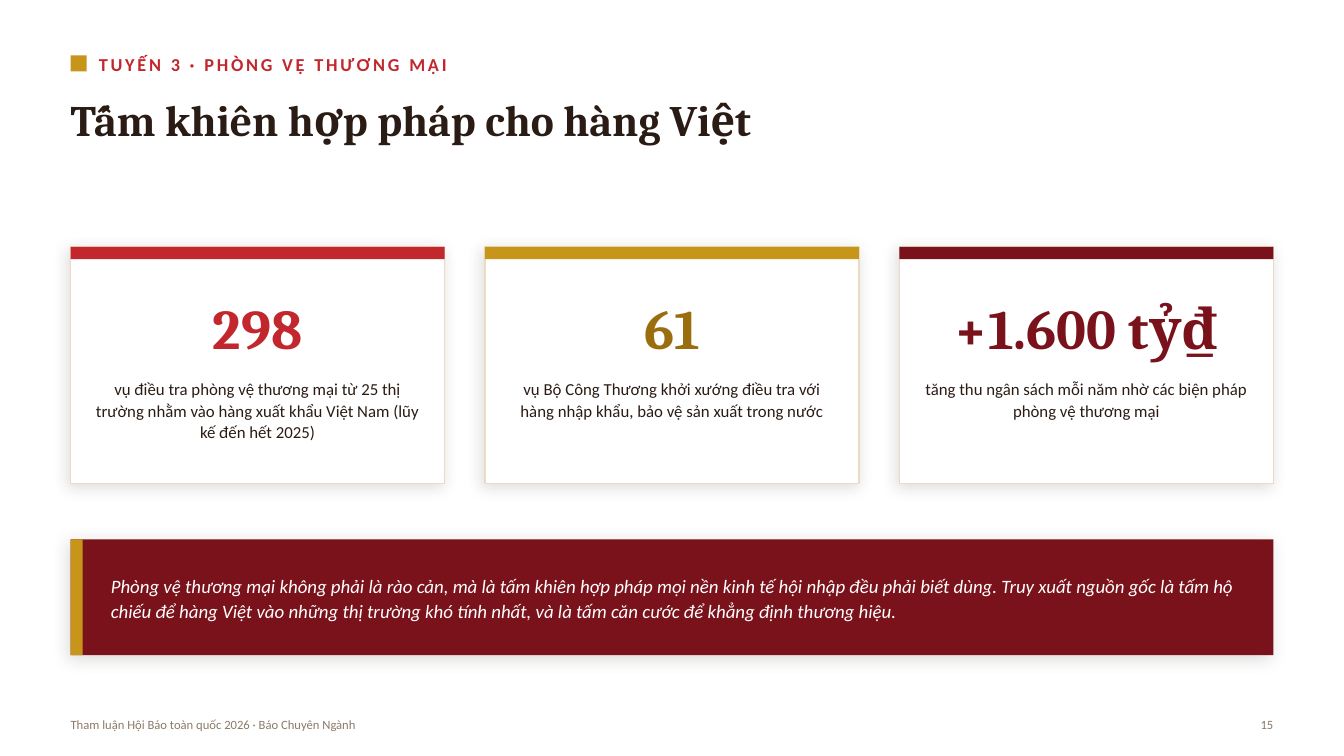
from lxml import etree
from pptx import Presentation
from pptx.dml.color import RGBColor
from pptx.enum.shapes import MSO_SHAPE
from pptx.enum.text import MSO_ANCHOR, MSO_AUTO_SIZE, PP_ALIGN
from pptx.oxml.ns import qn
from pptx.util import Inches, Pt

RECTANGLE = MSO_SHAPE.RECTANGLE
TOP, MIDDLE = MSO_ANCHOR.TOP, MSO_ANCHOR.MIDDLE
LEFT, CENTER, RIGHT = PP_ALIGN.LEFT, PP_ALIGN.CENTER, PP_ALIGN.RIGHT
NO_AUTOFIT = MSO_AUTO_SIZE.NONE

RED, GOLD, DARK_GOLD, MAROON = "C1272D", "C8951B", "9A6E0F", "7A121B"
INK, MUTED, WHITE, CARD_EDGE = "2A1C14", "8A7A68", "FFFFFF", "EADBC4"
HEADING_FONT, BODY_FONT = "Cambria", "Calibri"

MARGIN, CONTENT_WIDTH = 0.7, 11.93
CARD_TOP, CARD_WIDTH, CARD_HEIGHT, CARD_GAP = 2.45, 3.71, 2.35, 0.4
CARD_PADDING, ACCENT = 0.25, 0.12
QUOTE_TOP, QUOTE_HEIGHT = 5.35, 1.15
FOOTER_TOP, FOOTER_HEIGHT = 7.04, 0.3

CARDS = [
    ("298", "vụ điều tra phòng vệ thương mại từ 25 thị trường nhằm vào hàng "
     "xuất khẩu Việt Nam (lũy kế đến hết 2025)", RED, RED),
    ("61", "vụ Bộ Công Thương khởi xướng điều tra với hàng nhập khẩu, "
     "bảo vệ sản xuất trong nước", GOLD, DARK_GOLD),
    ("+1.600 tỷ₫", "tăng thu ngân sách mỗi năm nhờ các biện pháp "
     "phòng vệ thương mại", MAROON, MAROON),
]
QUOTE = (
    "Phòng vệ thương mại không phải là rào cản, mà là tấm khiên hợp pháp mọi "
    "nền kinh tế hội nhập đều phải biết dùng. Truy xuất nguồn gốc là tấm hộ "
    "chiếu để hàng Việt vào những thị trường khó tính nhất, và là tấm căn cước "
    "để khẳng định thương hiệu."
)


def rgb(value):
    """Turn a hex string into a colour."""
    return RGBColor.from_string(value)


def write(frame, text, size=12, color=INK, font=BODY_FONT, bold=False,
          italic=False, align=LEFT, anchor=TOP, line_spacing=1.0, tracking=0):
    """Fill a text frame with one formatted paragraph."""
    frame.word_wrap = True
    frame.auto_size = NO_AUTOFIT
    frame.vertical_anchor = anchor
    frame.margin_left = frame.margin_right = 0
    frame.margin_top = frame.margin_bottom = 0
    paragraph = frame.paragraphs[0]
    paragraph.alignment = align
    paragraph.line_spacing = line_spacing
    paragraph.space_before = Pt(0)
    run = paragraph.add_run()
    run.text = text
    run.font.name = font
    run.font.size = Pt(size)
    run.font.bold = bold
    run.font.italic = italic
    run.font.color.rgb = rgb(color)
    if tracking:
        run._r.get_or_add_rPr().set("spc", str(tracking * 100))


class StatSlide:
    """Hold the current slide and draw its elements in one style."""

    def __init__(self, deck):
        """Add a title-only slide to the deck."""
        self.slide = deck.slides.add_slide(deck.slide_layouts[5])

    def title(self, text, left, top, width, height):
        """Place and format the title."""
        heading = self.slide.shapes.title
        heading.left, heading.top = Inches(left), Inches(top)
        heading.width, heading.height = Inches(width), Inches(height)
        write(heading.text_frame, text, size=31, font=HEADING_FONT, bold=True)

    def text(self, text, left, top, width, height, **style):
        """Add a text box."""
        box = self.slide.shapes.add_textbox(
            Inches(left), Inches(top), Inches(width), Inches(height))
        write(box.text_frame, text, **style)

    def block(self, left, top, width, height, fill, edge=None, raised=False):
        """Add a rectangle, with an optional edge and soft shadow."""
        panel = self.slide.shapes.add_shape(
            RECTANGLE, Inches(left), Inches(top), Inches(width), Inches(height))
        panel.fill.solid()
        panel.fill.fore_color.rgb = rgb(fill)
        if edge:
            panel.line.color.rgb = rgb(edge)
            panel.line.width = Pt(1)
        else:
            panel.line.fill.background()
        panel.shadow.inherit = False
        if raised:
            self.soft_shadow(panel)

    def soft_shadow(self, panel):
        """Give a panel a faint blurred shadow."""
        effects = panel._element.spPr.find(qn("a:effectLst"))
        shadow = etree.SubElement(
            effects, qn("a:outerShdw"), blurRad=str(Pt(11)), dist=str(Pt(3)),
            dir=str(135 * 60000), algn="bl", rotWithShape="0")
        tint = etree.SubElement(shadow, qn("a:srgbClr"), val=INK)
        etree.SubElement(tint, qn("a:alpha"), val="14000")

    def card(self, left, figure, caption, accent, figure_color):
        """Add a card with a coloured top, a figure and a caption."""
        self.block(left, CARD_TOP, CARD_WIDTH, CARD_HEIGHT, WHITE,
                   edge=CARD_EDGE, raised=True)
        self.block(left, CARD_TOP, CARD_WIDTH, ACCENT, accent)
        self.text(figure, left, CARD_TOP + 0.32, CARD_WIDTH, 0.95, size=40,
                  color=figure_color, font=HEADING_FONT, bold=True,
                  align=CENTER, anchor=MIDDLE)
        self.text(caption, left + CARD_PADDING, CARD_TOP + 1.3,
                  CARD_WIDTH - 2 * CARD_PADDING, 0.95,
                  align=CENTER, line_spacing=1.06)

    def quote(self, text):
        """Add the closing statement band."""
        self.block(MARGIN, QUOTE_TOP, CONTENT_WIDTH, QUOTE_HEIGHT, MAROON,
                   raised=True)
        self.block(MARGIN, QUOTE_TOP, ACCENT, QUOTE_HEIGHT, GOLD)
        self.text(text, MARGIN + 0.4, QUOTE_TOP, CONTENT_WIDTH - 0.7,
                  QUOTE_HEIGHT, size=13.5, color=WHITE, italic=True,
                  anchor=MIDDLE, line_spacing=1.12)

    def footer(self, text, left, width, align=LEFT):
        """Add a small footer text."""
        self.text(text, left, FOOTER_TOP, width, FOOTER_HEIGHT, size=9,
                  color=MUTED, align=align, anchor=MIDDLE)


def main():
    """Build and save the slide."""
    deck = Presentation()
    deck.slide_width, deck.slide_height = Inches(13.33), Inches(7.5)
    page = StatSlide(deck)
    page.block(MARGIN, 0.55, 0.16, 0.16, GOLD)
    page.text("TUYẾN 3 · PHÒNG VỆ THƯƠNG MẠI", 0.98, 0.47, 11.63, 0.34,
              size=13, color=RED, bold=True, anchor=MIDDLE, tracking=2)
    page.title("Tấm khiên hợp pháp cho hàng Việt", MARGIN, 0.92,
               CONTENT_WIDTH, 1)
    for index, card in enumerate(CARDS):
        page.card(MARGIN + index * (CARD_WIDTH + CARD_GAP), *card)
    page.quote(QUOTE)
    page.footer("Tham luận Hội Báo toàn quốc 2026 · Báo Chuyên Ngành", MARGIN, 9)
    page.footer("15", MARGIN + CONTENT_WIDTH - 0.6, 0.6, align=RIGHT)
    deck.save("out.pptx")


if __name__ == "__main__":
    main()
